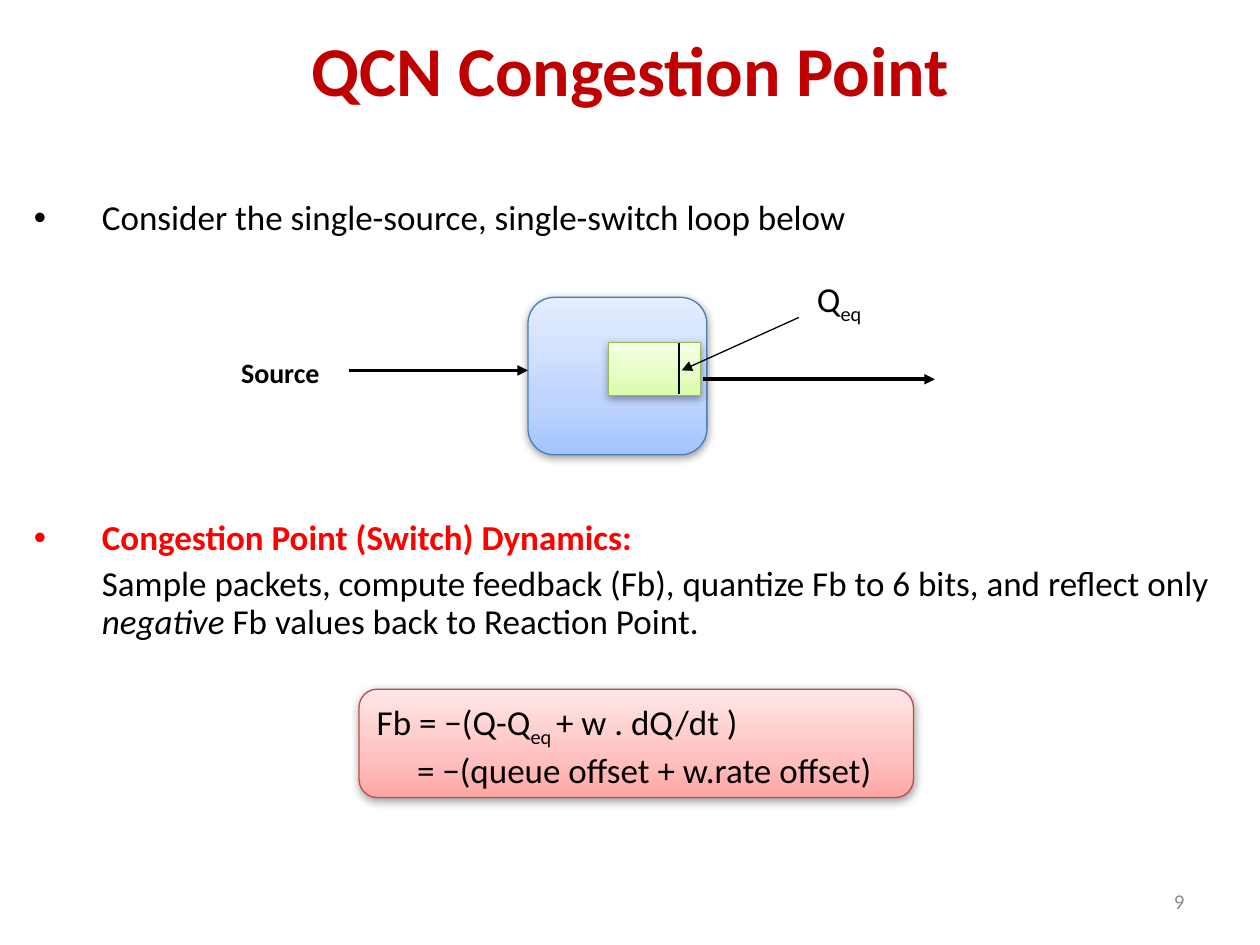
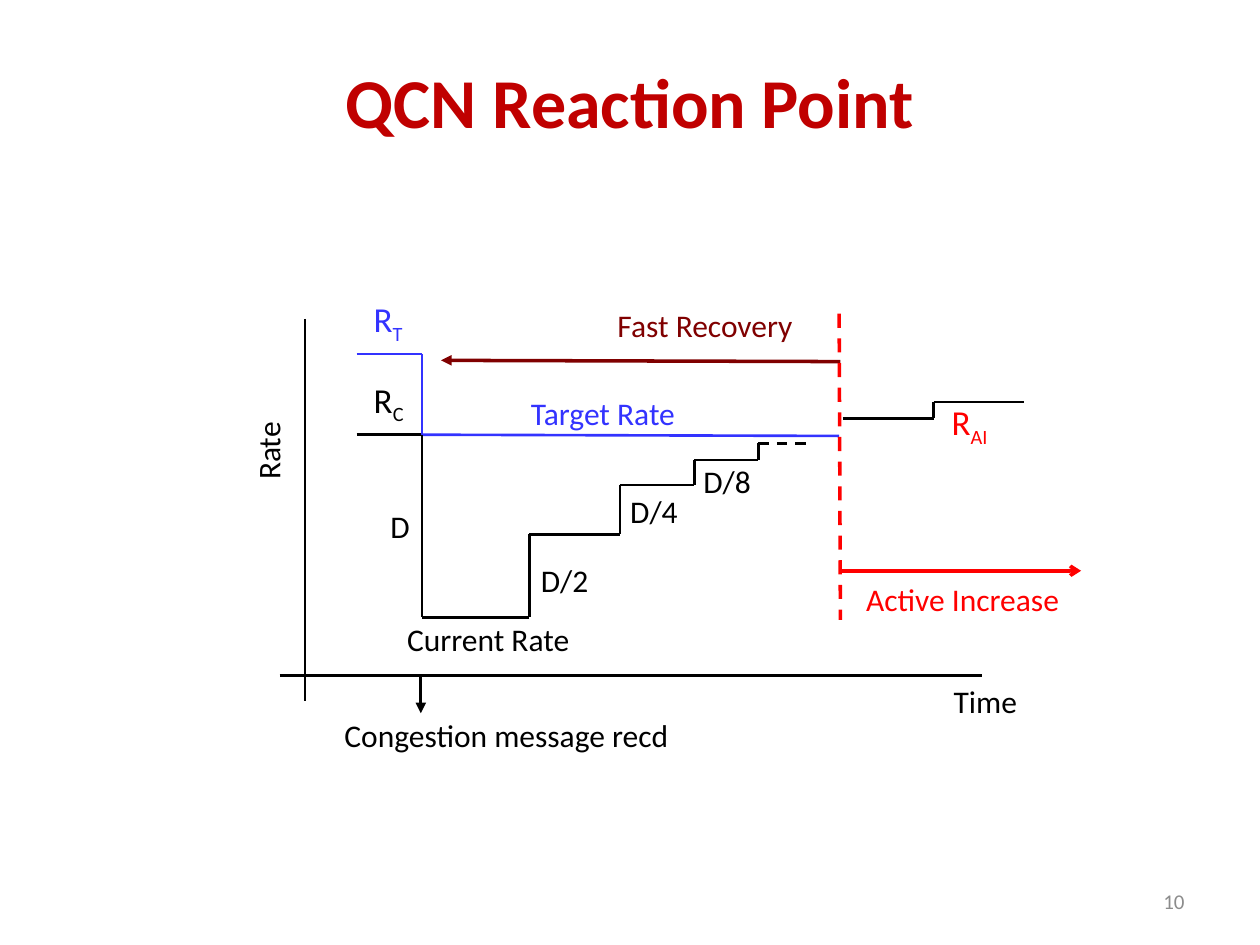
from itertools import pairwise

from lxml.etree import SubElement
from pptx import Presentation
from pptx.dml.color import RGBColor
from pptx.enum.dml import MSO_LINE_DASH_STYLE as Dash
from pptx.enum.shapes import MSO_CONNECTOR as Connector, MSO_SHAPE as Shape
from pptx.enum.text import MSO_ANCHOR as Anchor, PP_ALIGN as Align
from pptx.oxml.ns import qn
from pptx.util import Inches, Pt

FONT = "Calibri"
BLACK, RED, BLUE, MAROON = "000000", "FF0000", "3333FF", "800000"
TITLE_RED, NUMBER_GREY = "C00000", "8C8C8C"
TITLE_ONLY = 5
SHADOW_BLUR, SHADOW_DISTANCE = 5, 1.6

INTRO = ["Consider the single-source, single-switch loop below"]
DYNAMICS_HEADING = ["Congestion Point (Switch) Dynamics:"]
DYNAMICS = [[
    "Sample packets, compute feedback (Fb), quantize Fb to 6 bits, and reflect only ",
    ("negative ", "italic"),
    "Fb values back to Reaction Point.",
]]
FEEDBACK = [
    ["Fb = −(Q-Q", ("eq ", "sub"), "+ w . dQ/dt )"],
    ["= −(queue offset + w.rate offset)"],
]
SWITCH = dict(box=(4.19, 2.36, 1.42, 1.25), shades=("A3C4FF", "BFD5FF", "E5EEFF"), edge="4A7EBB")
QUEUE = dict(box=(4.83, 2.72, 0.73, 0.42), shades=("DAFDA7", "E4FDC2", "F5FFE6"), edge="98B954")
FORMULA = dict(box=(2.85, 5.47, 4.4, 0.86), shades=("FFA6A5", "FFC0BF", "FFE7E7"), edge="BF4C48")

LOOP_LINES = [
    ([(2.77, 2.94), (4.19, 2.94)], dict(width=2, tail="triangle")),
    ([(5.58, 3.01), (7.42, 3.01)], dict(width=2, tail="triangle")),
    ([(5.39, 2.72), (5.39, 3.13)], dict(width=0.75)),
    ([(6.34, 2.52), (5.41, 2.94)], dict(width=0.75, tail="triangle")),
]
LOOP_LABELS = [
    (["Source"], (1.75, 2.77, 0.95, 0.37), dict(size=16, bold=True)),
    (["Q", ("eq", "sub")], (6.37, 2.17, 0.58, 0.44), dict(size=20)),
]

RATE_LINES = [
    ([(2.22, 5.36), (7.79, 5.36)], {}),
    ([(2.42, 2.53), (2.42, 5.56)], {}),
    ([(3.34, 5.36), (3.34, 5.66)], dict(tail="triangle")),
    ([(3.35, 3.45), (6.66, 3.46)], dict(color=BLUE)),
    ([(2.83, 3.45), (3.35, 3.45), (3.35, 4.9), (4.2, 4.9), (4.2, 4.24), (4.92, 4.24),
      (4.92, 3.85), (5.51, 3.85), (5.51, 3.65), (6.02, 3.65), (6.02, 3.52)], {}),
    ([(6.02, 3.52), (6.41, 3.52)], dict(dashed=True)),
    ([(2.83, 2.81), (3.35, 2.81), (3.35, 3.45)], dict(color=BLUE)),
    ([(6.69, 3.32), (7.41, 3.32), (7.41, 3.19), (8.13, 3.19)], {}),
    ([(6.67, 4.53), (8.58, 4.53)], dict(color=RED, width=2, tail="arrow")),
    ([(6.67, 2.87), (3.5, 2.86)], dict(color=MAROON, width=2, tail="triangle")),
    ([(6.66, 2.49), (6.67, 4.92)], dict(color=RED, width=2, dashed=True)),
]
RATE_LABELS = [
    (["Time"], (7.45, 5.36, 0.74, 0.4), {}),
    (["Rate"], (1.76, 3.38, 0.73, 0.4), dict(rotation=270)),
    (["Current Rate"], (3.06, 4.87, 1.63, 0.4), {}),
    (["Congestion message recd"], (2.47, 5.63, 3.1, 0.4), {}),
    (["D"], (3, 3.97, 0.35, 0.41), {}),
    (["D/2"], (4.19, 4.4, 0.58, 0.41), {}),
    (["D/4"], (4.9, 3.85, 0.58, 0.41), {}),
    (["D/8"], (5.48, 3.61, 0.58, 0.41), {}),
    (["Target Rate"], (4.04, 3.08, 1.49, 0.4), dict(color=BLUE)),
    (["R", ("C", "sub")], (2.86, 2.97, 0.45, 0.44), dict(size=20)),
    (["R", ("T", "sub")], (2.86, 2.33, 0.44, 0.44), dict(size=20, color=BLUE)),
    (["Active Increase"], (6.77, 4.55, 1.74, 0.41), dict(color=RED)),
    (["Fast Recovery"], (4.69, 2.38, 1.81, 0.4), dict(color=MAROON)),
    (["R", ("AI", "sub")], (7.44, 3.15, 0.51, 0.44), dict(size=20, color=RED)),
]


def rgb(value):
    return RGBColor.from_string(value)


def inches(values):
    return [Inches(value) for value in values]


def write(frame, paragraphs, size=18, color=BLACK, bold=False, align=Align.LEFT,
          anchor=Anchor.TOP, wrap=True):
    frame.word_wrap = wrap
    frame.vertical_anchor = anchor
    for index, pieces in enumerate(paragraphs):
        paragraph = frame.add_paragraph() if index else frame.paragraphs[0]
        paragraph.alignment = align
        for piece in pieces:
            words, style = (piece, "") if isinstance(piece, str) else piece
            run = paragraph.add_run()
            run.text = words
            font = run.font
            font.name, font.size, font.bold = FONT, Pt(size), bold
            font.color.rgb = rgb(color)
            if style == "italic":
                font.italic = True
            elif style == "sub":
                run._r.get_or_add_rPr().set("baseline", "-25000")
    return frame.paragraphs


def indent(paragraph, left, first=0):
    properties = paragraph._p.get_or_add_pPr()
    properties.set("marL", str(Inches(left)))
    properties.set("indent", str(Inches(first)))
    return properties


def add_label(slide, pieces, box, rotation=0, **style):
    label = slide.shapes.add_textbox(*inches(box))
    label.rotation = rotation
    write(label.text_frame, [pieces], align=Align.CENTER, anchor=Anchor.MIDDLE, wrap=False, **style)


def add_points(slide, top, height, heading, details=(), **style):
    box = slide.shapes.add_textbox(*inches((0.17, top, 9.58, height)))
    first, *rest = write(box.text_frame, [heading], size=20, **style)
    for detail in details:
        rest.append(box.text_frame.add_paragraph())
    for paragraph in [first, *rest]:
        paragraph.line_spacing, paragraph.space_before = 0.9, Pt(4.5)
    bullet = indent(first, 0.54, -0.54)
    SubElement(bullet, qn("a:buFont"), typeface="Arial")
    SubElement(bullet, qn("a:buChar"), char="•")
    return rest


def add_path(slide, points, color=BLACK, width=1.5, tail=None, dashed=False):
    for start, end in pairwise(points):
        segment = slide.shapes.add_connector(Connector.STRAIGHT, *inches(start + end))
        segment.line.color.rgb = rgb(color)
        segment.line.width = Pt(width)
        if dashed:
            segment.line.dash_style = Dash.DASH
        if tail:
            SubElement(segment.line._get_or_add_ln(), qn("a:tailEnd"), type=tail)
        SubElement(segment._element.spPr, qn("a:effectLst"))


def add_block(slide, outline, box, shades, edge):
    block = slide.shapes.add_shape(outline, *inches(box))
    block.fill.gradient()
    block.fill.gradient_angle = 90
    stops = block._element.spPr.find(".//" + qn("a:gsLst"))
    for stop in list(stops):
        stops.remove(stop)
    for position, shade in zip((0, 35, 100), shades):
        stop = SubElement(stops, qn("a:gs"), pos=str(position * 1000))
        SubElement(stop, qn("a:srgbClr"), val=shade)
    block.line.color.rgb = rgb(edge)
    block.line.width = Pt(0.75)
    block.shadow.inherit = False
    effects = block._element.spPr.find(qn("a:effectLst"))
    shadow = SubElement(effects, qn("a:outerShdw"), blurRad=str(Pt(SHADOW_BLUR)),
                        dist=str(Pt(SHADOW_DISTANCE)), dir="5400000", rotWithShape="0")
    tint = SubElement(shadow, qn("a:srgbClr"), val=BLACK)
    SubElement(tint, qn("a:alpha"), val="38000")
    return block


def start_slide(deck, title, title_box, number):
    slide = deck.slides.add_slide(deck.slide_layouts[TITLE_ONLY])
    heading = slide.shapes.title
    heading.left, heading.top, heading.width, heading.height = inches(title_box)
    write(heading.text_frame, [[title]], size=40, color=TITLE_RED, bold=True,
          align=Align.CENTER, anchor=Anchor.MIDDLE)
    footer = slide.shapes.add_textbox(*inches((7.17, 6.95, 2.33, 0.4)))
    write(footer.text_frame, [[str(number)]], size=12, color=NUMBER_GREY,
          align=Align.RIGHT, anchor=Anchor.MIDDLE)
    return slide


def draw_lines_and_labels(slide, lines, labels):
    for points, style in lines:
        add_path(slide, points, **style)
    for pieces, box, style in labels:
        add_label(slide, pieces, box, **style)


def build_congestion_point(deck):
    slide = start_slide(deck, "QCN Congestion Point", (0, 0, 10, 1.08), 9)
    add_points(slide, 1.54, 0.45, INTRO)
    for paragraph, pieces in zip(
            add_points(slide, 4.08, 1.15, DYNAMICS_HEADING, DYNAMICS, color=RED, bold=True), DYNAMICS):
        indent(paragraph, 0.54)
        for piece in pieces:
            words, style = (piece, "") if isinstance(piece, str) else piece
            run = paragraph.add_run()
            run.text = words
            run.font.name, run.font.size = FONT, Pt(20)
            run.font.color.rgb = rgb(BLACK)
            run.font.italic = style == "italic"
    add_block(slide, Shape.ROUNDED_RECTANGLE, **SWITCH)
    add_block(slide, Shape.RECTANGLE, **QUEUE)
    draw_lines_and_labels(slide, LOOP_LINES, LOOP_LABELS)
    formula = add_block(slide, Shape.ROUNDED_RECTANGLE, **FORMULA)
    indent(write(formula.text_frame, FEEDBACK, size=20)[1], 0.32)


def build_reaction_point(deck):
    slide = start_slide(deck, "QCN Reaction Point", (0.5, 0.17, 9, 1.25), 10)
    draw_lines_and_labels(slide, RATE_LINES, RATE_LABELS)


def main():
    deck = Presentation()
    deck.slide_width, deck.slide_height = Inches(10), Inches(7.5)
    build_congestion_point(deck)
    build_reaction_point(deck)
    deck.save("out.pptx")


if __name__ == "__main__":
    main()
